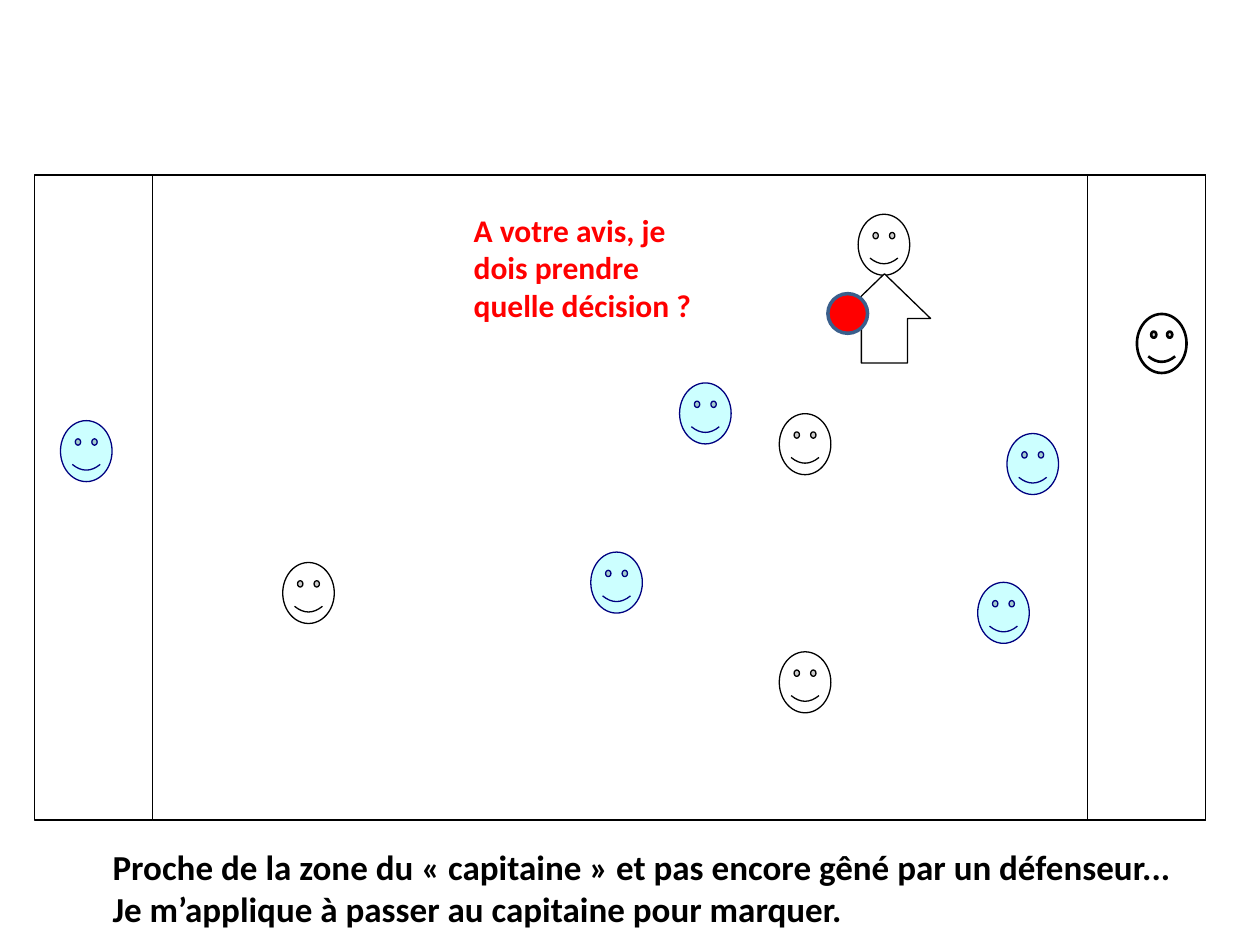
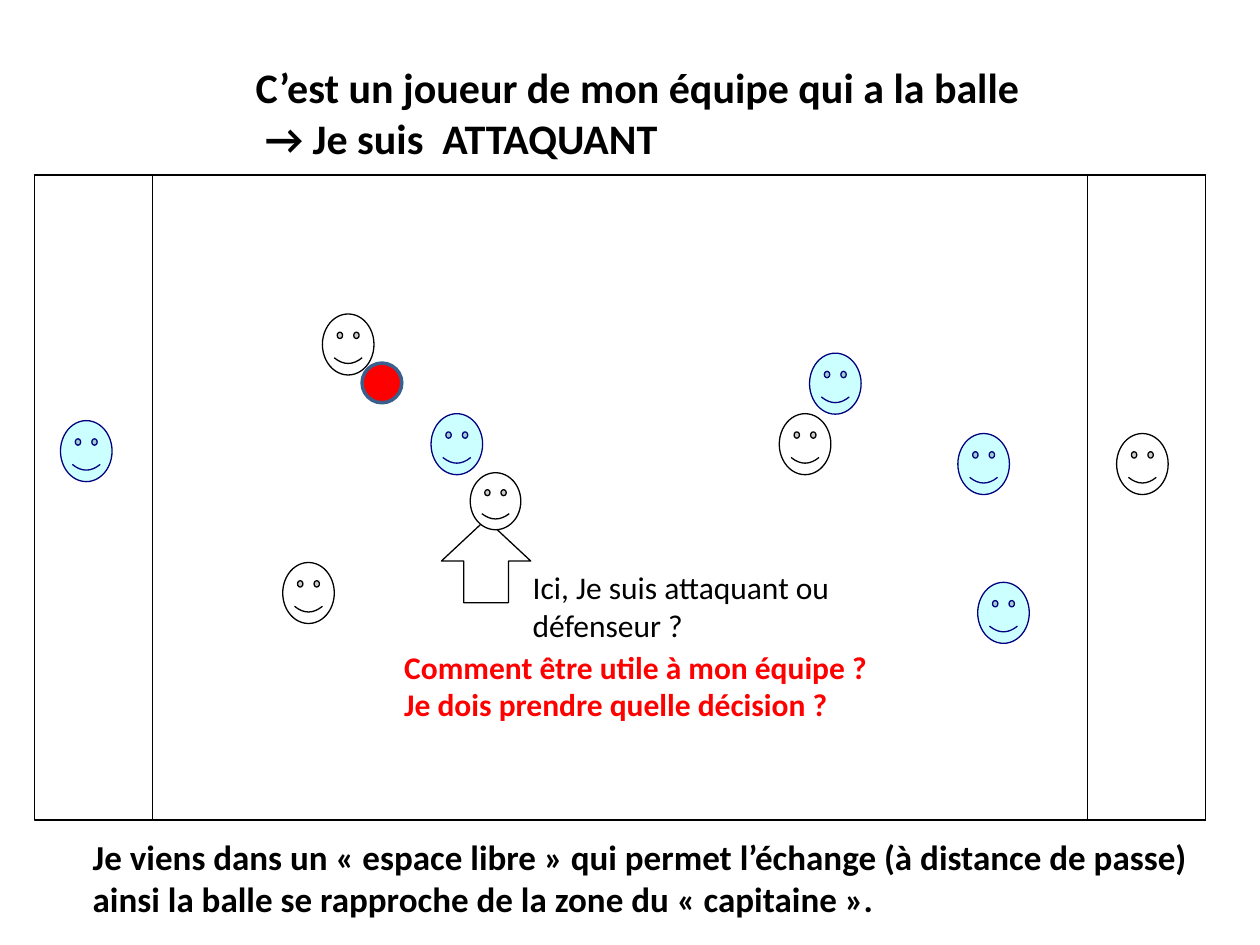
from pptx import Presentation
from pptx.dml.color import RGBColor
from pptx.enum.shapes import MSO_SHAPE
from pptx.enum.text import MSO_ANCHOR, MSO_AUTO_SIZE, PP_ALIGN
from pptx.util import Cm, Pt

COLORS = {
    "black": "000000",
    "white": "FFFFFF",
    "red": "FF0000",
    "navy": "000080",
    "pale": "CCFFFF",
    "ball_edge": "3A5F8C",
}
FONT = "Calibri"
TITLE_ONLY, BLANK = 5, 6

# Pitch geometry, in centimetres
PITCH_LEFT, PITCH_TOP, PITCH_WIDTH, PITCH_HEIGHT = 0.7, 3.53, 23.6, 13.0
ZONE_WIDTH = 2.37
FACE_SIZE = (1.04, 1.23)
BALL_SIZE = (0.8, 0.8)

# Players who stay in place from one situation to the next
FIXED_TEAM = [(5.7, 11.34), (15.71, 8.34)]
FIXED_OPPONENTS = [(1.22, 8.48), (19.71, 11.74)]


def color(name):
    return RGBColor.from_string(COLORS[name])


class Board:
    """Holds the deck, its style and the slide being drawn."""

    def __init__(self):
        self.deck = Presentation()
        self.deck.slide_width, self.deck.slide_height = Cm(25.4), Cm(19.05)
        self.slide = None

    def new_slide(self, layout):
        self.slide = self.deck.slides.add_slide(self.deck.slide_layouts[layout])

    def shape(self, kind, position, size, fill="white", line="black", weight=0.75):
        lengths = [Cm(value) for value in (*position, *size)]
        shape = self.slide.shapes.add_shape(kind, *lengths)
        shape.shadow.inherit = False
        shape.fill.solid()
        shape.fill.fore_color.rgb = color(fill)
        shape.line.color.rgb = color(line)
        shape.line.width = Pt(weight)

    def pitch(self):
        right_zone = PITCH_LEFT + PITCH_WIDTH - ZONE_WIDTH
        areas = [
            (PITCH_LEFT + ZONE_WIDTH, PITCH_WIDTH - ZONE_WIDTH),
            (PITCH_LEFT, ZONE_WIDTH),
            (right_zone, ZONE_WIDTH),
        ]
        for left, width in areas:
            self.shape(MSO_SHAPE.RECTANGLE, (left, PITCH_TOP), (width, PITCH_HEIGHT))

    def teammate(self, position, size=FACE_SIZE, weight=0.75):
        self.shape(MSO_SHAPE.SMILEY_FACE, position, size, weight=weight)

    def opponent(self, position):
        self.shape(MSO_SHAPE.SMILEY_FACE, position, FACE_SIZE, "pale", "navy")

    def players(self, team, opponents):
        for position in FIXED_TEAM + team:
            self.teammate(position)
        for position in FIXED_OPPONENTS + opponents:
            self.opponent(position)

    def body(self, position, size):
        self.shape(MSO_SHAPE.UP_ARROW, position, size)

    def ball(self, position):
        self.shape(MSO_SHAPE.OVAL, position, BALL_SIZE, "red", "ball_edge", 2)

    def fill_text(self, box, text, size, tint, bold):
        frame = box.text_frame
        frame.word_wrap = True
        frame.auto_size = MSO_AUTO_SIZE.NONE
        frame.vertical_anchor = MSO_ANCHOR.TOP
        frame.text = text
        for para in frame.paragraphs:
            para.alignment = PP_ALIGN.LEFT
            for span in para.runs:
                span.font.name = FONT
                span.font.size = Pt(size)
                span.font.bold = bold
                span.font.color.rgb = color(tint)

    def text(self, position, size, text, points=18, tint="black", bold=False):
        box = self.slide.shapes.add_textbox(*[Cm(value) for value in (*position, *size)])
        self.fill_text(box, text, points, tint, bold)
        return box

    def question(self, position, size, text):
        self.text(position, size, text, tint="red", bold=True)

    def caption(self, position, width, text):
        box = self.text(position, (width, 1.96), text, 20, bold=True)
        box.text_frame.margin_left = Cm(0.37)

    def title(self, text):
        box = self.slide.shapes.title
        box.left, box.top, box.width, box.height = Cm(4.9), Cm(1.12), Cm(18.8), Cm(2.3)
        self.fill_text(box, text, 24, "black", True)


def draw_pass_to_captain(board):
    board.new_slide(BLANK)
    board.pitch()
    board.players(
        team=[(15.71, 13.14), (17.3, 4.32)],
        opponents=[(20.3, 8.74), (11.91, 11.13), (13.7, 7.72)],
    )
    # Ball carrier and captain
    board.body((16.9, 5.52), (1.86, 1.8))
    board.ball((16.69, 5.92))
    board.teammate((22.92, 6.33), (1.0, 1.19), weight=1.5)
    # Texts
    board.question((9.3, 4.12), (5.4, 2.58), "A votre avis, je dois prendre quelle décision ?")
    board.caption(
        (1.9, 16.92), 22.4,
        "Proche de la zone du « capitaine » et pas encore gêné par un défenseur...\v"
        "Je m’applique à passer au capitaine pour marquer.",
    )


def draw_free_space(board):
    board.new_slide(TITLE_ONLY)
    board.title("C’est un joueur de mon équipe qui a la balle\v → Je suis  ATTAQUANT")
    board.pitch()
    board.players(
        team=[(22.51, 8.74), (6.5, 6.33)],
        opponents=[(19.31, 8.74), (16.32, 7.12), (8.69, 8.34)],
    )
    # Ball and the player who has to decide
    board.ball((7.3, 7.32))
    board.body((8.9, 10.47), (1.8, 1.68))
    board.teammate((9.48, 9.53), (1.02, 1.15))
    # Texts
    board.text((10.49, 11.33), (7.8, 1.8), "Ici, Je suis attaquant ou défenseur ?")
    board.question(
        (7.9, 12.93), (10, 1.8),
        "Comment être utile à mon équipe ?\nJe dois prendre quelle décision ?",
    )
    board.caption(
        (1.5, 16.71), 22.8,
        "Je viens dans un « espace libre » qui permet l’échange (à distance de passe)\v"
        "ainsi la balle se rapproche de la zone du « capitaine ».",
    )


def main():
    board = Board()
    draw_pass_to_captain(board)
    draw_free_space(board)
    board.deck.save("out.pptx")


if __name__ == "__main__":
    main()
